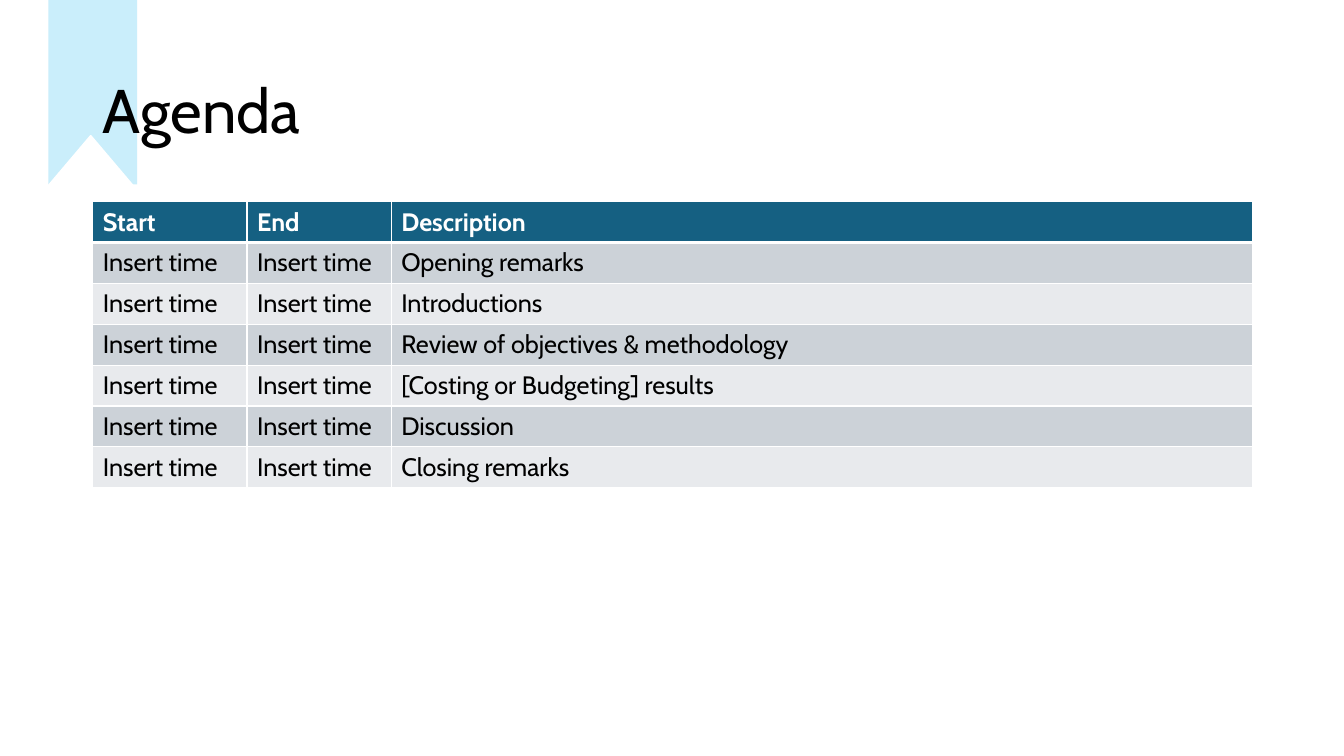
"""Build the agenda slide with its ribbon, title and timetable."""
import pptx
import pptx.dml.color
import pptx.enum.shapes
import pptx.enum.text
import pptx.oxml
import pptx.oxml.ns
import pptx.util

Inches = pptx.util.Inches
Pt = pptx.util.Pt
SHAPES = pptx.enum.shapes.MSO_SHAPE
COLOURS = {
    "white": "FFFFFF",
    "black": "000000",
    "header": "156082",
    "odd": "CCD2D8",
    "even": "E8EAED",
    "ribbon": "CAEEFB",
}
TITLE = {"name": "Cabin", "size": Pt(44)}
BODY = {"name": "Cabin", "size": Pt(18), "bold": False}
HEADER = {**BODY, "bold": True}
COLUMN_WIDTHS = (1.53, 1.43, 8.54)
HEADINGS = ("Start", "End", "Description")
TOPICS = (
    "Opening remarks",
    "Introductions",
    "Review of objectives & methodology",
    "[Costing or Budgeting] results",
    "Discussion",
    "Closing remarks",
)


def colour(name):
    return pptx.dml.color.RGBColor.from_string(COLOURS[name])


def write(para, text, values, ink):
    span = para.add_run()
    span.text = text
    for key, value in values.items():
        setattr(span.font, key, value)
    span.font.color.rgb = colour(ink)


def add_block(page, kind, place, fill, line=None):
    block = page.shapes.add_shape(kind, *map(Inches, place))
    block.shadow.inherit = False
    block.fill.solid()
    block.fill.fore_color.rgb = colour(fill)
    if line:
        block.line.color.rgb = colour(line)
        block.line.width = Pt(1.5)
    else:
        block.line.fill.background()


def add_title(page, text):
    box = page.shapes.add_textbox(*map(Inches, (0.92, 0.4, 11.5, 1.45)))
    box.text_frame.word_wrap = True
    box.text_frame.vertical_anchor = pptx.enum.text.MSO_ANCHOR.MIDDLE
    para = box.text_frame.paragraphs[0]
    para.line_spacing = 0.9
    write(para, text, TITLE, "black")


def add_borders(cell, top, bottom):
    properties = cell._tc.get_or_add_tcPr()
    for side, width in (("L", 1), ("R", 1), ("T", top), ("B", bottom)):
        properties.append(pptx.oxml.parse_xml(
            f'<a:ln{side} {pptx.oxml.ns.nsdecls("a")} w="{Pt(width)}">'
            f'<a:solidFill><a:srgbClr val="{COLOURS["white"]}"/></a:solidFill>'
            f'</a:ln{side}>'
        ))


def add_agenda(page):
    rows = [HEADINGS] + [("Insert time", "Insert time", topic) for topic in TOPICS]
    place = map(Inches, (0.92, 2, 11.5, 2.84))
    table = page.shapes.add_table(len(rows), len(HEADINGS), *place).table
    for column, width in zip(table.columns, COLUMN_WIDTHS):
        column.width = Inches(width)
    for number, texts in enumerate(rows):
        if number == 0:
            values, ink, fill = HEADER, "white", "header"
        else:
            values, ink, fill = BODY, "black", "odd" if number % 2 else "even"
        for cell, text in zip(table.rows[number].cells, texts):
            add_borders(cell, 3 if number == 1 else 1, 3 if number == 0 else 1)
            cell.fill.solid()
            cell.fill.fore_color.rgb = colour(fill)
            write(cell.text_frame.paragraphs[0], text, values, ink)


def main():
    deck = pptx.Presentation()
    deck.slide_width = Inches(13.33)
    deck.slide_height = Inches(7.5)
    page = deck.slides.add_slide(deck.slide_layouts[6])
    add_agenda(page)
    add_block(page, SHAPES.RECTANGLE, (0.48, 0, 0.88, 1.83), "ribbon")
    add_block(page, SHAPES.ISOSCELES_TRIANGLE, (0.4, 1.35, 1, 0.59), "white", "white")
    add_title(page, "Agenda")
    deck.save("out.pptx")


if __name__ == "__main__":
    main()
